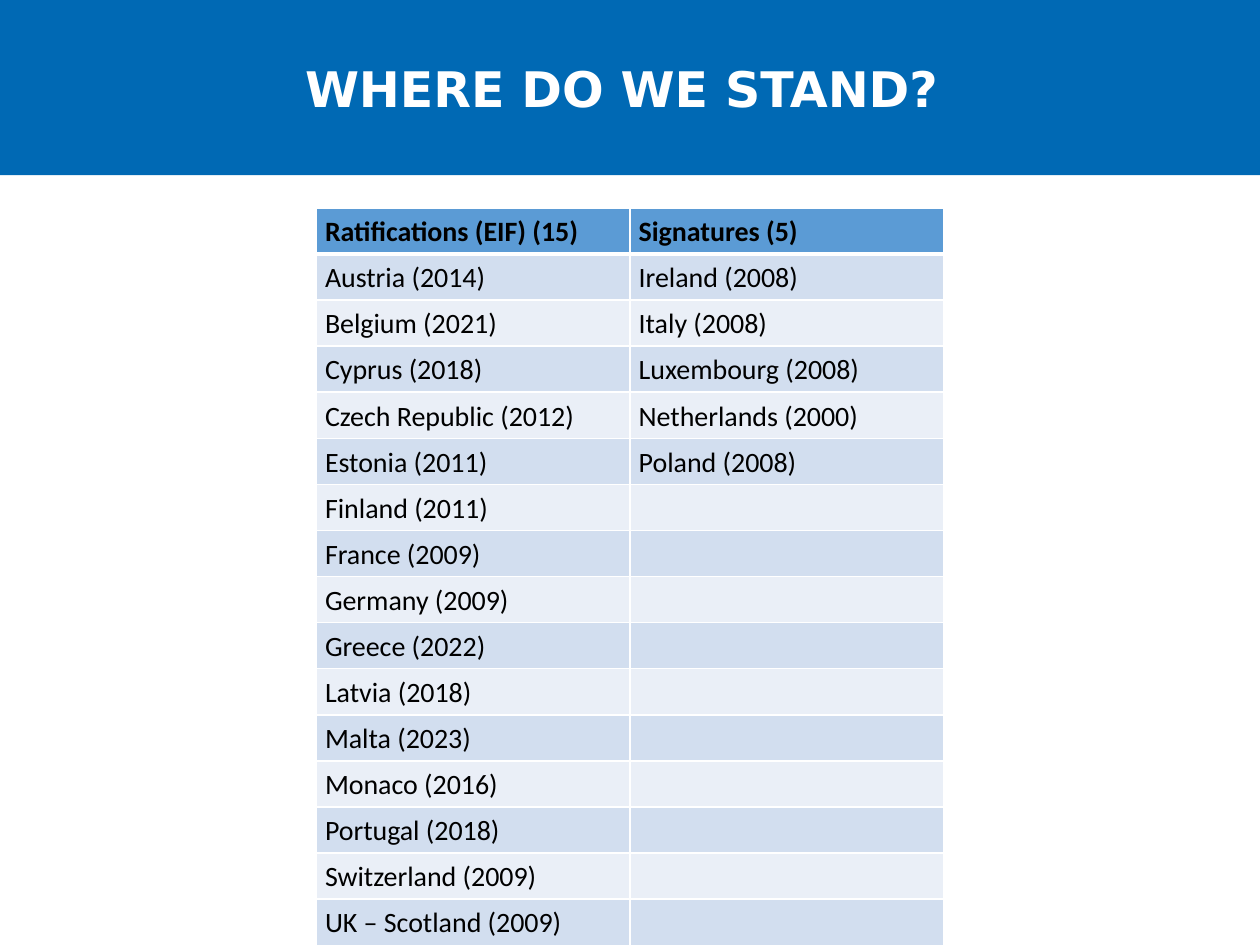
from itertools import zip_longest
from lxml.etree import SubElement as Sub
from pptx import Presentation
from pptx.dml.color import RGBColor
from pptx.enum.text import MSO_ANCHOR as ANCHOR, PP_ALIGN as ALIGN
from pptx.oxml.ns import qn
from pptx.util import Inches, Pt


def rgb(hex_str):
    return RGBColor.from_string(hex_str)


def style(obj, fmt):
    for name, value in fmt.items():
        setattr(obj, name, value)


WHITE, BLACK = "FFFFFF", "000000"
HEADER, BANDS = "5B9BD5", ("EAEFF7", "D2DEEF")
MARGINS = {"margin_left": Inches(0.07), "margin_right": Inches(0.07),
           "margin_top": Pt(2.7), "margin_bottom": Pt(2.7)}

ratifications = [
    "Ratifications (EIF) (15)", "Austria (2014)", "Belgium (2021)",
    "Cyprus (2018)", "Czech Republic (2012)", "Estonia (2011)",
    "Finland (2011)", "France (2009)", "Germany (2009)", "Greece (2022)",
    "Latvia (2018)", "Malta (2023)", "Monaco (2016)", "Portugal (2018)",
    "Switzerland (2009)", "UK – Scotland (2009)",
]
signatures = [
    "Signatures (5)", "Ireland (2008)", "Italy (2008)", "Luxembourg (2008)",
    "Netherlands (2000)", "Poland (2008)",
]
rows = list(zip_longest(ratifications, signatures, fillvalue=""))

prs = Presentation()
style(prs, {"slide_width": Inches(10), "slide_height": Inches(7.5)})
s = prs.slides.add_slide(prs.slide_layouts[5])

title = s.shapes.title
style(title, {"left": 0, "top": 0, "width": Inches(10), "height": Inches(1.39)})
title.fill.solid()
title.fill.fore_color.rgb = rgb("0069B4")
tf = title.text_frame
tf.vertical_anchor = ANCHOR.MIDDLE
p = tf.paragraphs[0]
p.alignment = ALIGN.CENTER
r = p.add_run()
r.text = "WHERE DO WE STAND? "
style(r.font, {"name": "DejaVu Sans", "size": Pt(28), "bold": True})
r.font.color.rgb = rgb(WHITE)

frame = s.shapes.add_table(len(rows), 2, Inches(2.51), Inches(1.65),
                           Inches(4.98), Inches(5.56))
table = frame.table
for i, texts in enumerate(rows):
    table.rows[i].height = Inches(0.3)
    for j, text in enumerate(texts):
        cell = table.cell(i, j)
        style(cell, MARGINS)
        tc_pr = cell._tc.get_or_add_tcPr()
        widths = {"L": 1, "R": 1, "T": 3 if i == 1 else 1, "B": 3 if i == 0 else 1}
        for side, width in widths.items():
            ln = Sub(tc_pr, qn(f"a:ln{side}"), w=str(Pt(width)))
            Sub(Sub(ln, qn("a:solidFill")), qn("a:srgbClr"), val=WHITE)
        cell.fill.solid()
        cell.fill.fore_color.rgb = rgb(BANDS[i % 2] if i else HEADER)
        p = cell.text_frame.paragraphs[0]
        style(p, {"line_spacing": 1.07, "space_after": Pt(8)})
        if text:
            r = p.add_run()
            r.text = text
            style(r.font, {"name": "Calibri", "size": Pt(16), "bold": i == 0})
            r.font.color.rgb = rgb(BLACK)
        else:
            Sub(p._p, qn("a:endParaRPr"), sz="1600")
frame.height = Inches(5.56)

prs.save("out.pptx")
